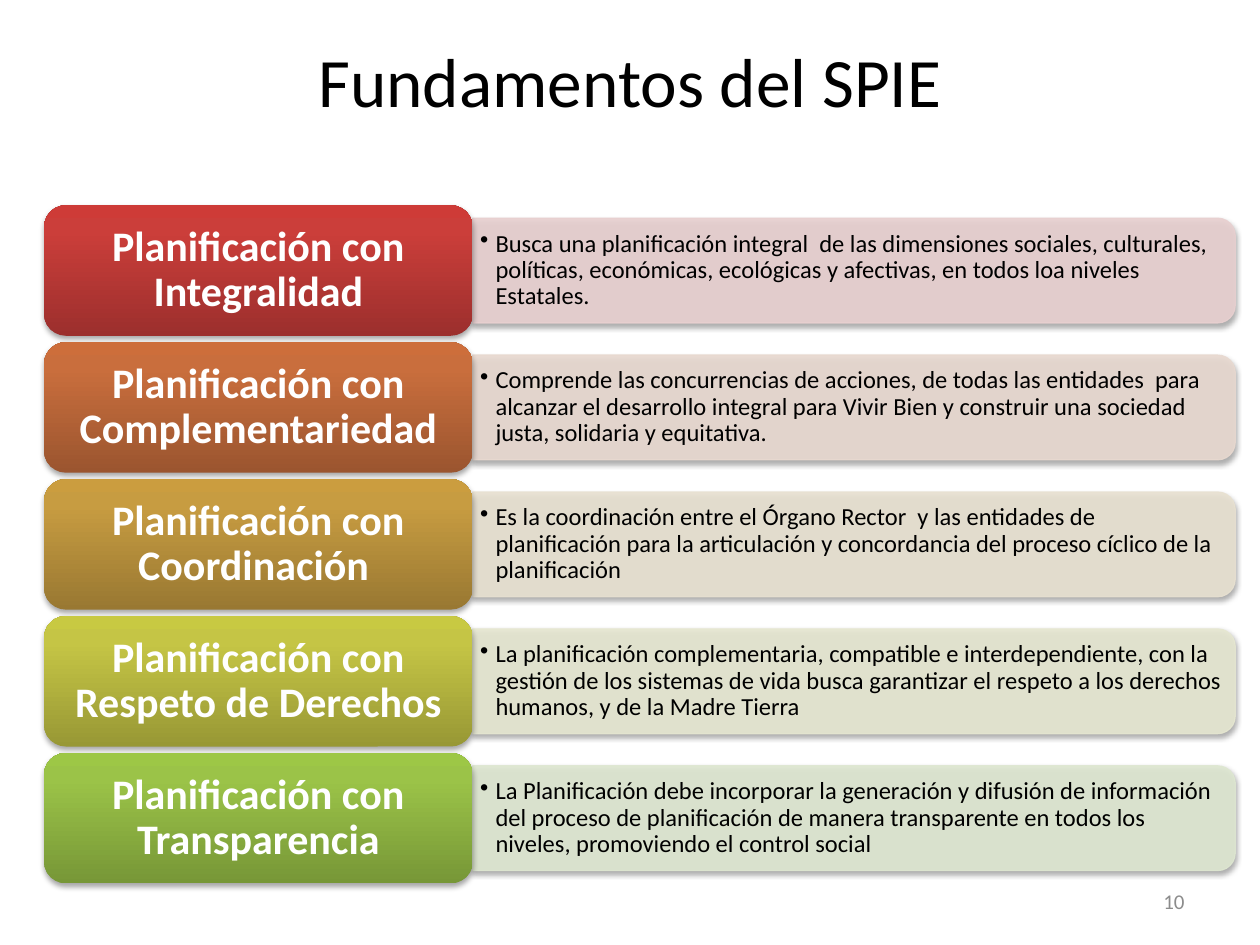
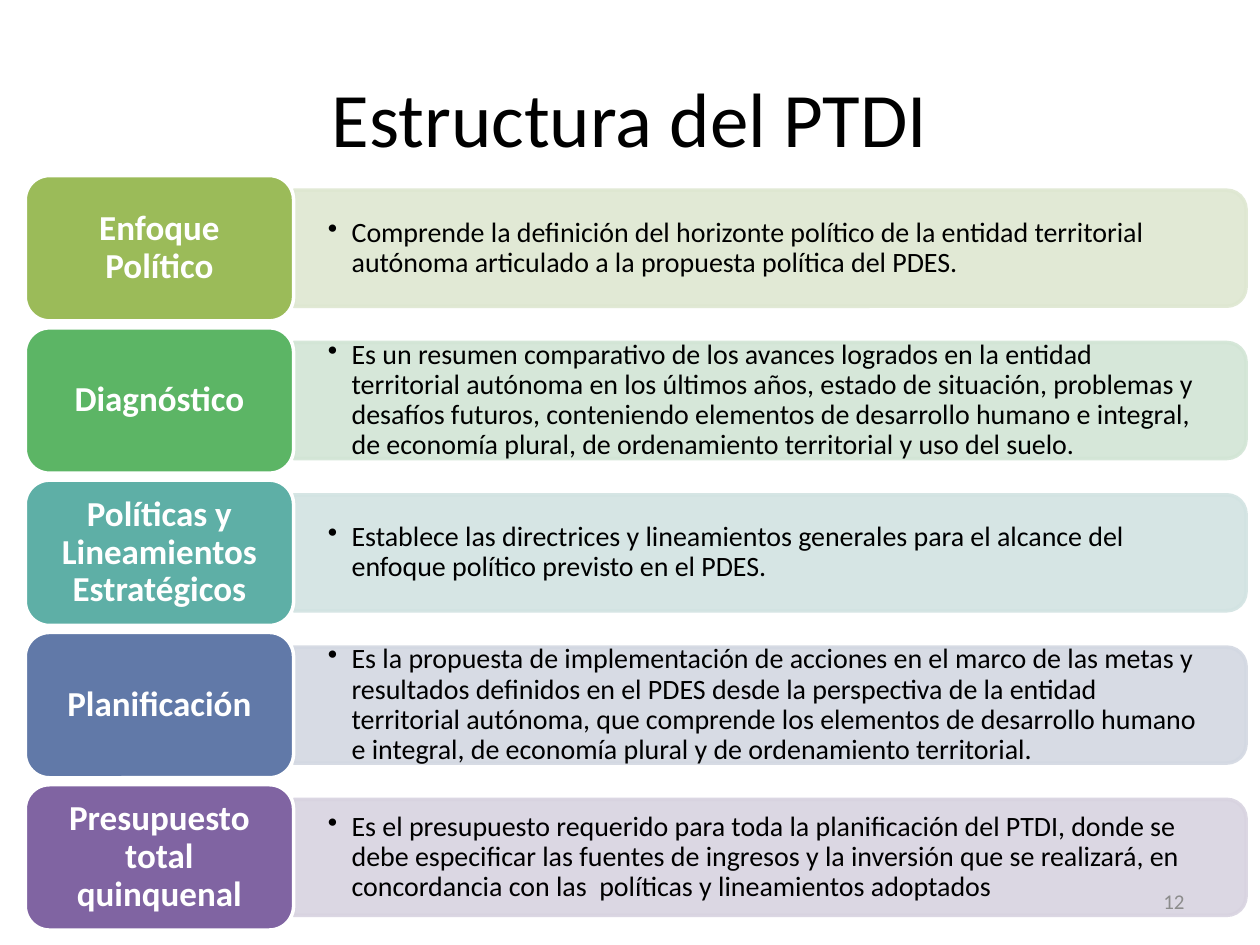
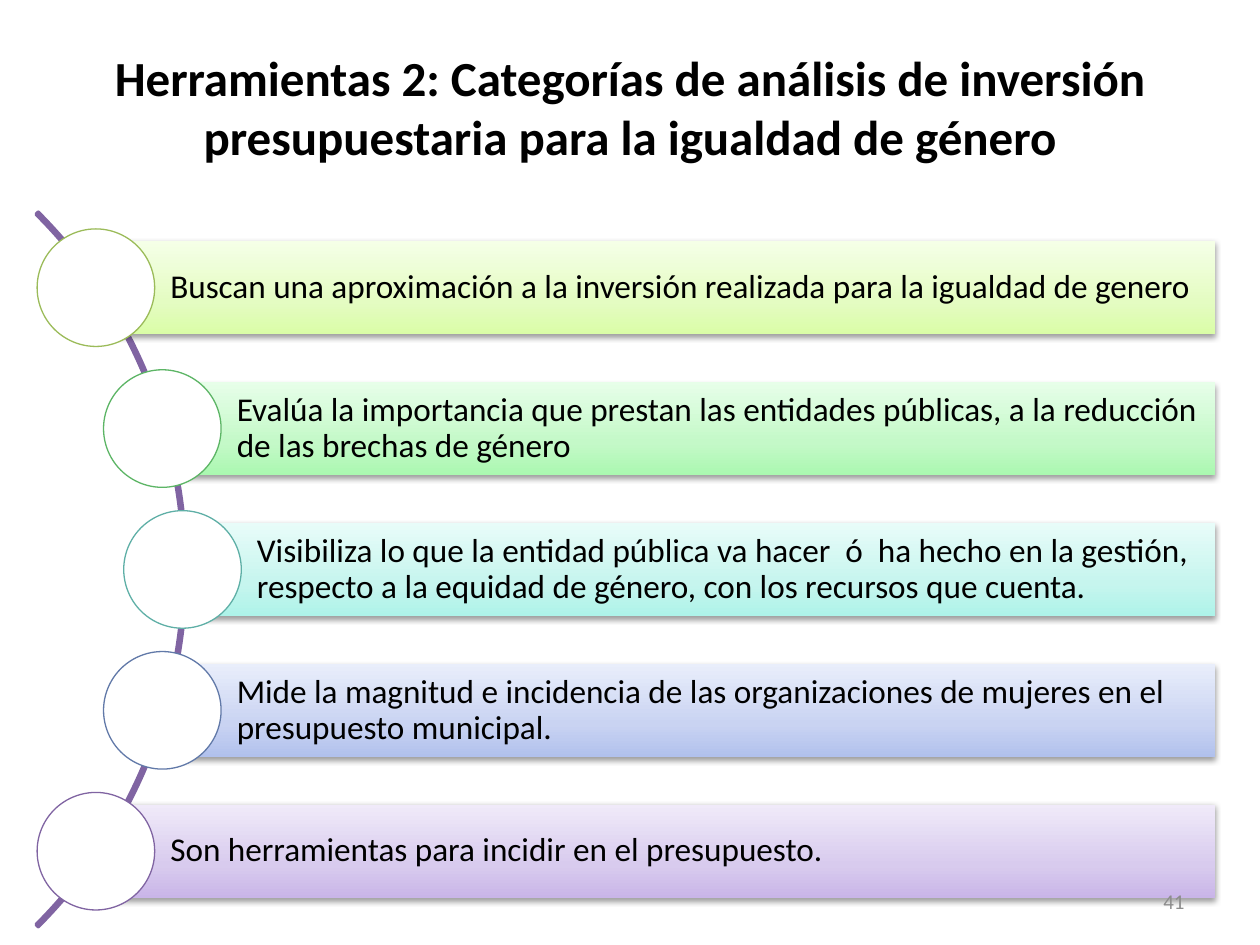
from copy import deepcopy
from dataclasses import dataclass
from math import sqrt

from lxml import etree
from pptx import Presentation
from pptx.dml.color import RGBColor
from pptx.enum.shapes import MSO_SHAPE
from pptx.enum.text import MSO_ANCHOR, PP_ALIGN
from pptx.oxml.ns import qn
from pptx.shapes.autoshape import Shape
from pptx.slide import Slide
from pptx.text.text import TextFrame
from pptx.util import Cm, Pt

ROUNDED, ROUNDED_END = MSO_SHAPE.ROUNDED_RECTANGLE, MSO_SHAPE.ROUND_2_SAME_RECTANGLE
RECTANGLE, OVAL, BLOCK_ARC = MSO_SHAPE.RECTANGLE, MSO_SHAPE.OVAL, MSO_SHAPE.BLOCK_ARC
MIDDLE = MSO_ANCHOR.MIDDLE
LEFT, CENTER, RIGHT = PP_ALIGN.LEFT, PP_ALIGN.CENTER, PP_ALIGN.RIGHT

FONT = "Calibri"
BLACK = RGBColor(0x00, 0x00, 0x00)
WHITE = RGBColor(0xFF, 0xFF, 0xFF)
NUMBER_GRAY = RGBColor(0x8C, 0x8C, 0x8C)
OLIVE = RGBColor(0x9B, 0xBB, 0x59)
GREEN = RGBColor(0x5C, 0xB5, 0x65)
TEAL = RGBColor(0x5E, 0xAF, 0xA6)
BLUE = RGBColor(0x61, 0x79, 0xA8)
PURPLE = RGBColor(0x80, 0x64, 0xA2)
PALE_RED = RGBColor(0xE8, 0xD0, 0xD0)
PALE_ORANGE = RGBColor(0xE8, 0xD9, 0xD0)
PALE_GOLD = RGBColor(0xE8, 0xE1, 0xD1)
PALE_YELLOW = RGBColor(0xE6, 0xE7, 0xD1)
PALE_OLIVE = RGBColor(0xDE, 0xE7, 0xD1)
PALE_GREEN = RGBColor(0xD2, 0xE5, 0xD5)
PALE_TEAL = RGBColor(0xD2, 0xE3, 0xE2)
PALE_BLUE = RGBColor(0xD3, 0xD8, 0xE2)
PALE_PURPLE = RGBColor(0xD8, 0xD3, 0xE0)


@dataclass(frozen=True)
class Gradient:
    """Three colours from bottom to top; middle is the position of the second."""
    colors: tuple[RGBColor, RGBColor, RGBColor]
    middle: float


@dataclass(frozen=True)
class Shadow:
    distance: int
    opacity: int


@dataclass(frozen=True)
class TextStyle:
    size: float
    color: RGBColor = BLACK
    bold: bool = False
    align: PP_ALIGN = LEFT
    spacing: float = 1.0
    insets: tuple[float, float, float, float] = (0.25, 0.13, 0.25, 0.13)
    hanging: float = 0


@dataclass(frozen=True)
class Principle:
    label: str
    description: str
    label_fill: Gradient | RGBColor
    tint: RGBColor


@dataclass(frozen=True)
class BandGrid:
    """Measures in cm of a column of labels, each with a description band."""
    left: float
    top: float
    pitch: float
    label_width: float
    label_height: float
    band_width: float
    band_height: float
    band_line: float
    label_style: TextStyle
    band_style: TextStyle
    label_outline: RGBColor | None = None
    shadow: Shadow | None = None


@dataclass(frozen=True)
class Tool:
    text: str
    fill: Gradient
    outline: RGBColor


def gradient(bottom: str, middle: str, top: str, position: float) -> Gradient:
    return Gradient(tuple(map(RGBColor.from_string, (bottom, middle, top))), position)


def label_gradient(bottom: str, middle: str, top: str) -> Gradient:
    return gradient(bottom, middle, top, 0.8)


def bar_gradient(bottom: str, middle: str, top: str) -> Gradient:
    return gradient(bottom, middle, top, 0.35)


BAND_SHADOW = Shadow(23000, 35000)
BAR_SHADOW = Shadow(20000, 38000)
NUMBER_STYLE = TextStyle(12, NUMBER_GRAY, align=RIGHT)
BAR_STYLE = TextStyle(19, spacing=0.9, insets=(1.5, 0.13, 0.13, 0.13))

FOUNDATION_GRID = BandGrid(
    left=0.89, top=4.14, pitch=2.76, label_width=8.64, label_height=2.63,
    band_width=15.37, band_height=2.11, band_line=0.75, shadow=BAND_SHADOW,
    label_style=TextStyle(24, WHITE, True, CENTER, 0.9),
    band_style=TextStyle(14, spacing=0.9, insets=(0.15, 0.08, 0.15, 0.08), hanging=0.31))

STRUCTURE_GRID = BandGrid(
    left=0.51, top=3.54, pitch=3.07, label_width=5.41, label_height=2.93,
    band_width=19.2, band_height=2.34, band_line=2, label_outline=WHITE,
    label_style=TextStyle(20, WHITE, True, CENTER, 0.9, (0.2, 0.1, 0.2, 0.1)),
    band_style=TextStyle(16, spacing=0.9, insets=(0.69, 0.36, 0.69, 0.36), hanging=0.48))

FOUNDATIONS = [
    Principle("Planificación con Integralidad",
              "Busca una planificación integral  de las dimensiones sociales, culturales, "
              "políticas, económicas, ecológicas y afectivas, en todos loa niveles Estatales.",
              label_gradient("9C2F2D", "CB3E3A", "CE3B37"), PALE_RED),
    Principle("Planificación con Complementariedad",
              "Comprende las concurrencias de acciones, de todas las entidades  para alcanzar "
              "el desarrollo integral para Vivir Bien y construir una sociedad justa, "
              "solidaria y equitativa.",
              label_gradient("9B552F", "C96E3D", "CD6E3B"), PALE_ORANGE),
    Principle("Planificación con Coordinación ",
              "Es la coordinación entre el Órgano Rector  y las entidades de planificación "
              "para la articulación y concordancia del proceso cíclico de la planificación",
              label_gradient("997832", "C79C41", "CB9D3F"), PALE_GOLD),
    Principle("Planificación con Respeto de Derechos",
              "La planificación complementaria, compatible e interdependiente, con la gestión "
              "de los sistemas de vida busca garantizar el respeto a los derechos humanos, "
              "y de la Madre Tierra",
              label_gradient("989835", "C5C545", "C8C942"), PALE_YELLOW),
    Principle("Planificación con Transparencia",
              "La Planificación debe incorporar la generación y difusión de información del "
              "proceso de planificación de manera transparente en todos los niveles, "
              "promoviendo el control social",
              label_gradient("779737", "9BC348", "9DC746"), PALE_OLIVE),
]

STRUCTURE = [
    Principle("Enfoque Político",
              "Comprende la definición del horizonte político de la entidad territorial "
              "autónoma articulado a la propuesta política del PDES.", OLIVE, PALE_OLIVE),
    Principle("Diagnóstico",
              "Es un resumen comparativo de los avances logrados en la entidad territorial "
              "autónoma en los últimos años, estado de situación, problemas y desafíos "
              "futuros, conteniendo elementos de desarrollo humano e integral, de economía "
              "plural, de ordenamiento territorial y uso del suelo.", GREEN, PALE_GREEN),
    Principle("Políticas y Lineamientos Estratégicos",
              "Establece las directrices y lineamientos generales para el alcance del "
              "enfoque político previsto en el PDES.", TEAL, PALE_TEAL),
    Principle("Planificación",
              "Es la propuesta de implementación de acciones en el marco de las metas y "
              "resultados definidos en el PDES desde la perspectiva de la entidad "
              "territorial autónoma, que comprende los elementos de desarrollo humano e "
              "integral, de economía plural y de ordenamiento territorial.", BLUE, PALE_BLUE),
    Principle("Presupuesto total quinquenal",
              "Es el presupuesto requerido para toda la planificación del PTDI, donde se "
              "debe especificar las fuentes de ingresos y la inversión que se realizará, en "
              "concordancia con las  políticas y lineamientos adoptados", PURPLE, PALE_PURPLE),
]

TOOLS = [
    Tool("Buscan una aproximación a la inversión realizada para la igualdad de genero",
         bar_gradient("DAFDA7", "E4FCC2", "F5FFE7"), OLIVE),
    Tool("Evalúa la importancia que prestan las entidades públicas, a la reducción de las "
         "brechas de género", bar_gradient("AAF8B0", "C4F9C8", "E7FEE9"), GREEN),
    Tool("Visibiliza lo que la entidad pública va hacer  ó  ha hecho en la gestión,  "
         "respecto a la equidad de género, con los recursos que cuenta.",
         bar_gradient("AEF3E9", "C6F5EE", "E8FCF9"), TEAL),
    Tool("Mide la magnitud e incidencia de las organizaciones de mujeres en el presupuesto "
         "municipal.", bar_gradient("B1C1ED", "C9D3F2", "E9EEFB"), BLUE),
    Tool("Son herramientas para incidir en el presupuesto.",
         bar_gradient("C9B5E8", "D8CBEE", "F0EAF9"), PURPLE),
]


def write(frame: TextFrame, text: str, style: TextStyle) -> None:
    frame.word_wrap = True
    frame.vertical_anchor = MIDDLE
    (frame.margin_left, frame.margin_top,
     frame.margin_right, frame.margin_bottom) = map(Cm, style.insets)
    paragraph = frame.paragraphs[0]
    paragraph.alignment = style.align
    paragraph.line_spacing = style.spacing
    if style.hanging:
        properties = paragraph._p.get_or_add_pPr()
        properties.set("marL", str(Cm(style.hanging)))
        properties.set("indent", str(-Cm(style.hanging)))
        etree.SubElement(properties, qn("a:buChar")).set("char", "•")
    run = paragraph.add_run()
    run.text = text
    run.font.name = FONT
    run.font.size = Pt(style.size)
    run.font.bold = style.bold
    run.font.color.rgb = style.color


def add_text(slide: Slide, left: float, top: float, width: float, height: float,
             text: str, style: TextStyle) -> None:
    box = slide.shapes.add_textbox(Cm(left), Cm(top), Cm(width), Cm(height))
    write(box.text_frame, text, style)


def paint(shape: Shape, fill: Gradient | RGBColor | None) -> None:
    if fill is None:
        shape.fill.background()
    elif isinstance(fill, RGBColor):
        shape.fill.solid()
        shape.fill.fore_color.rgb = fill
    else:
        shape.fill.gradient()
        shape.fill.gradient_angle = 90
        stop_list = shape._element.spPr.find(".//" + qn("a:gsLst"))
        stop_list.append(deepcopy(stop_list[0]))
        positions = (0, fill.middle, 1)
        for stop, color, position in zip(shape.fill.gradient_stops, fill.colors, positions):
            stop.color.rgb = color
            stop.position = position


def cast_shadow(shape: Shape, shadow: Shadow) -> None:
    effects = shape._element.spPr.find(qn("a:effectLst"))
    outer = etree.SubElement(effects, qn("a:outerShdw"), blurRad="40000",
                             dist=str(shadow.distance), dir="5400000", rotWithShape="0")
    color = etree.SubElement(outer, qn("a:srgbClr"), val=str(BLACK))
    etree.SubElement(color, qn("a:alpha"), val=str(shadow.opacity))


def add_figure(slide: Slide, preset: MSO_SHAPE, left: float, top: float, width: float,
               height: float, fill: Gradient | RGBColor | None,
               outline: RGBColor | None = None, line_width: float = 0.75,
               shadow: Shadow | None = None, opacity: int | None = None) -> Shape:
    shape = slide.shapes.add_shape(preset, Cm(left), Cm(top), Cm(width), Cm(height))
    paint(shape, fill)
    if outline is None:
        shape.line.fill.background()
    else:
        shape.line.color.rgb = outline
        shape.line.width = Pt(line_width)
    if opacity is not None:
        for color in list(shape._element.spPr.iter(qn("a:srgbClr"))):
            etree.SubElement(color, qn("a:alpha"), val=str(opacity))
    shape.shadow.inherit = False
    if shadow:
        cast_shadow(shape, shadow)
    return shape


def add_band(slide: Slide, grid: BandGrid, middle: float, principle: Principle) -> None:
    """Draw a band rounded on its right end, with its bulleted description."""
    left = grid.left + grid.label_width
    width, height = grid.band_width, grid.band_height
    band = add_figure(slide, ROUNDED_END, left + (width - height) / 2, middle - width / 2,
                      height, width, principle.tint, principle.tint, grid.band_line,
                      grid.shadow, opacity=90000)
    band.rotation = 90
    add_text(slide, left, middle - height / 2, width - 0.1, height,
             principle.description, grid.band_style)


def add_principles(slide: Slide, grid: BandGrid, principles: list[Principle]) -> None:
    for row, principle in enumerate(principles):
        top = grid.top + row * grid.pitch
        add_band(slide, grid, top + grid.label_height / 2, principle)
        label = add_figure(slide, ROUNDED, grid.left, top, grid.label_width,
                           grid.label_height, principle.label_fill, grid.label_outline, 2,
                           grid.shadow)
        write(label.text_frame, principle.label, grid.label_style)


def add_tools(slide: Slide, tools: list[Tool]) -> None:
    """Draw bars that start on an arc, each with a circle at its start."""
    center_x, center_y, arc_size = -6.43, 11.48, 20.37
    row_radius, pitch, bar_right = 10.11, 2.84, 24.49
    bar_height, circle_size = 1.88, 2.37

    arc = add_figure(slide, BLOCK_ARC, center_x - arc_size / 2, center_y - arc_size / 2,
                     arc_size, arc_size, None, PURPLE, 2)
    for index, value in enumerate((189, 27, 0.003)):
        arc.adjustments[index] = value

    for row, tool in enumerate(tools):
        offset = (row - (len(tools) - 1) / 2) * pitch
        start, middle = center_x + sqrt(row_radius ** 2 - offset ** 2), center_y + offset
        bar = add_figure(slide, RECTANGLE, start, middle - bar_height / 2,
                         bar_right - start, bar_height, tool.fill, shadow=BAR_SHADOW)
        write(bar.text_frame, tool.text, BAR_STYLE)
        add_figure(slide, OVAL, start - circle_size / 2, middle - circle_size / 2,
                   circle_size, circle_size, WHITE, tool.outline)


def add_title(slide: Slide, text: str, size: float, middle: float,
              bold: bool = False) -> None:
    height = 2.4
    add_text(slide, 0, middle - height / 2, 25.4, height, text,
             TextStyle(size, bold=bold, align=CENTER))


def add_page_number(slide: Slide, number: int) -> None:
    add_text(slide, 18.21, 17.65, 5.92, 1.02, str(number), NUMBER_STYLE)


def main() -> None:
    deck = Presentation()
    deck.slide_width, deck.slide_height = Cm(25.4), Cm(19.05)
    blank = deck.slide_layouts[6]

    foundations = deck.slides.add_slide(blank)
    add_title(foundations, "Fundamentos del SPIE", 39.6, 1.6)
    add_principles(foundations, FOUNDATION_GRID, FOUNDATIONS)
    add_page_number(foundations, 10)

    structure = deck.slides.add_slide(blank)
    add_title(structure, "Estructura del PTDI", 44, 2.35)
    add_principles(structure, STRUCTURE_GRID, STRUCTURE)
    add_page_number(structure, 12)

    categories = deck.slides.add_slide(blank)
    add_title(categories, "Herramientas 2: Categorías de análisis de inversión "
              "presupuestaria para la igualdad de género", 28, 2.15, bold=True)
    add_tools(categories, TOOLS)
    add_page_number(categories, 41)

    deck.save("out.pptx")


if __name__ == "__main__":
    main()
